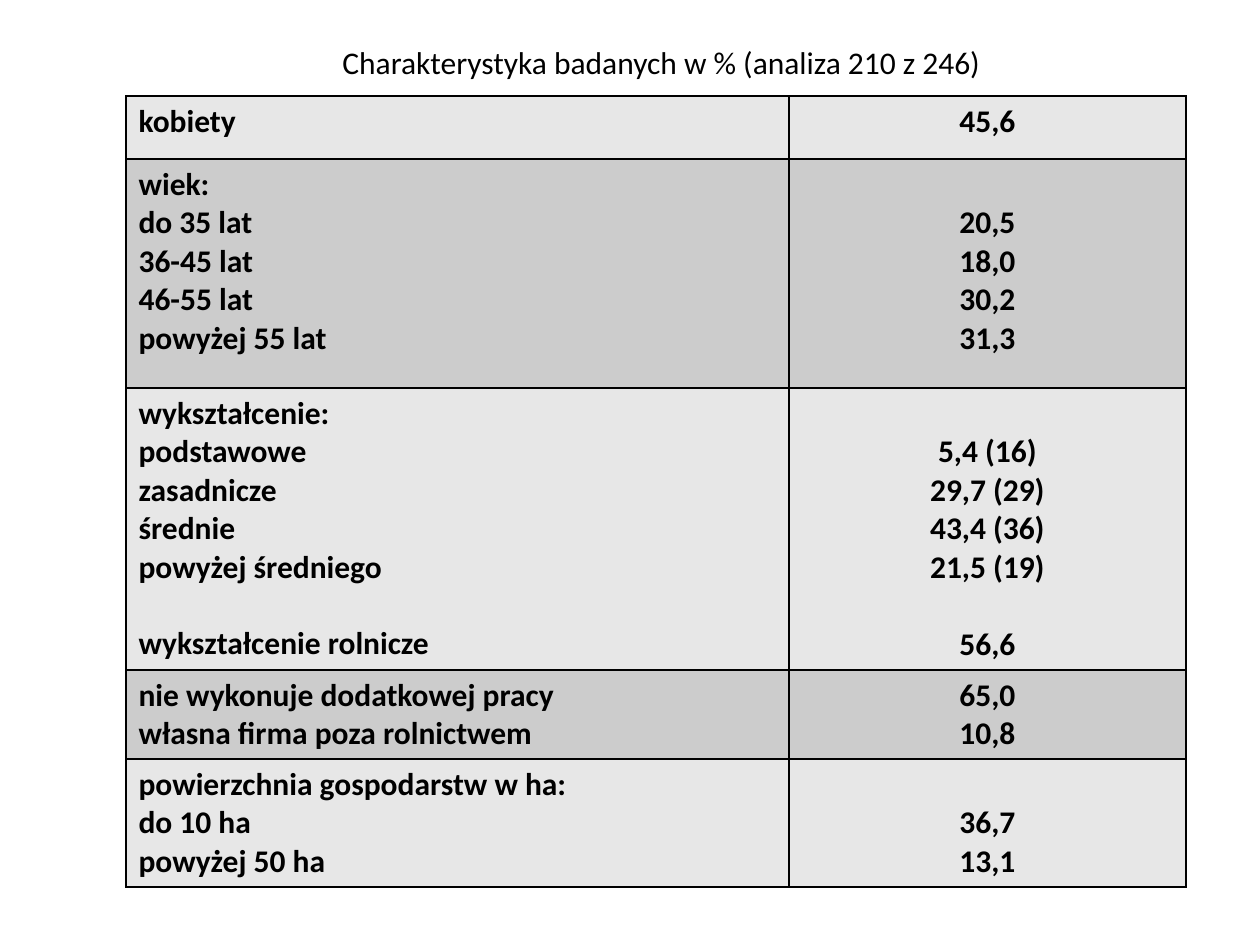
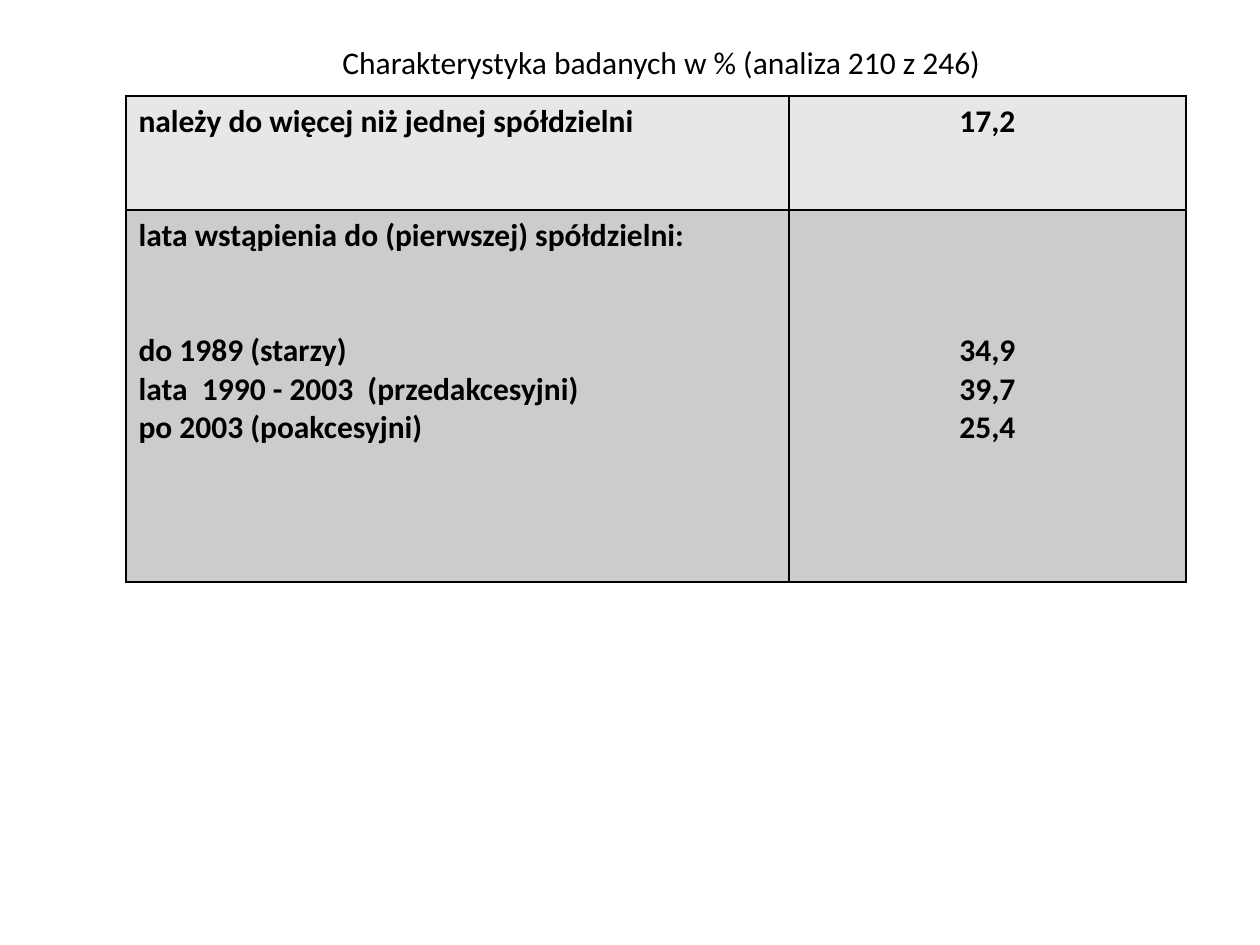
from lxml.etree import SubElement
from pptx import Presentation
from pptx.dml.color import RGBColor as Color
from pptx.enum.text import MSO_ANCHOR as Anchor, PP_ALIGN as Align
from pptx.oxml.ns import qn
from pptx.util import Pt

TITLE = "Charakterystyka badanych w % (analiza 210 z 246)"
# Each line is (label, value, empty line heights above it).
TABLES = [
    [
        (63, [("kobiety", "45,6", 0)]),
        (229, [
            ("wiek:", "", 0),
            ("do 35 lat", "20,5", 0),
            ("36-45 lat", "18,0", 0),
            ("46-55 lat", "30,2", 0),
            ("powyżej 55 lat", "31,3", 0),
        ]),
        (282, [
            ("wykształcenie:", "", 0),
            ("podstawowe", "5,4 (16)", 0),
            ("zasadnicze", "29,7 (29)", 0),
            ("średnie", "43,4 (36)", 0),
            ("powyżej średniego", "21,5 (19)", 0),
            ("wykształcenie rolnicze", "56,6", 1),
        ]),
        (89, [
            ("nie wykonuje dodatkowej pracy", "65,0", 0),
            ("własna firma poza rolnictwem", "10,8", 0),
        ]),
        (128, [
            ("powierzchnia gospodarstw w ha:", "", 0),
            ("do 10 ha", "36,7", 0),
            ("powyżej 50 ha", "13,1", 0),
        ]),
    ],
    [
        (114, [("należy do więcej niż jednej spółdzielni", "17,2", 0)]),
        (372, [
            ("lata wstąpienia do (pierwszej) spółdzielni:", "", 0),
            ("do 1989 (starzy)", "34,9", 2),
            ("lata  1990 - 2003  (przedakcesyjni)", "39,7", 0),
            ("po 2003 (poakcesyjni)", "25,4", 0),
        ]),
    ],
]

COLORS = {"text": "000000", "border": "000000", "odd": "E7E7E7", "even": "CCCCCC"}
TITLE_FONT = {"name": "Calibri", "size": Pt(18), "bold": False}
CELL_FONT = {**TITLE_FONT, "bold": True}
TABLE_FLAGS = {"first_row": False, "horz_banding": False}
COLUMN_WIDTHS = (663, 397)
ALIGNMENTS = (Align.LEFT, Align.CENTER)
TITLE_BOX = (126, 37, 1071, 49)
TABLE_CORNER = (126, 96)
LINE_HEIGHT = Pt(22)
SCALE = 914400 // 126


def px(length):
    return length * SCALE


def set_all(target, values):
    for name, value in values.items():
        setattr(target, name, value)


def write(paragraph, text, font, alignment):
    paragraph.alignment = alignment
    run = paragraph.add_run()
    run.text = text
    set_all(run.font, font)
    run.font.color.rgb = Color.from_string(COLORS["text"])


def add_title(slide):
    frame = slide.shapes.add_textbox(*map(px, TITLE_BOX)).text_frame
    set_all(frame, {"word_wrap": True, "vertical_anchor": Anchor.MIDDLE})
    write(frame.paragraphs[0], TITLE, TITLE_FONT, Align.CENTER)


def add_borders(cell):
    properties = cell._tc.get_or_add_tcPr()
    for side in ("lnL", "lnR", "lnT", "lnB"):
        line = SubElement(properties, qn(f"a:{side}"), w=str(Pt(1)))
        fill = SubElement(line, qn("a:solidFill"))
        SubElement(fill, qn("a:srgbClr"), val=COLORS["border"])


def fill_cell(cell, lines, alignment, color):
    add_borders(cell)
    cell.fill.solid()
    cell.fill.fore_color.rgb = Color.from_string(color)
    frame = cell.text_frame
    empty_lines = 0
    first = True
    for text, gap in lines:
        empty_lines += gap
        if not text:
            empty_lines += 1
            continue
        space = empty_lines * LINE_HEIGHT
        if first:
            paragraph = frame.paragraphs[0]
            cell.margin_top = cell.margin_top + space
        else:
            paragraph = frame.add_paragraph()
            paragraph.space_before = Pt(space / Pt(1))
        write(paragraph, text, CELL_FONT, alignment)
        first, empty_lines = False, 0


def add_table(slide, rows):
    size = (sum(COLUMN_WIDTHS), sum(height for height, _ in rows))
    table = slide.shapes.add_table(
        len(rows), len(COLUMN_WIDTHS), *map(px, TABLE_CORNER + size)
    ).table
    set_all(table, TABLE_FLAGS)
    for column, width in zip(table.columns, COLUMN_WIDTHS):
        column.width = px(width)
    for index, (height, lines) in enumerate(rows):
        table.rows[index].height = px(height)
        color = COLORS["even" if index % 2 else "odd"]
        for column, alignment in enumerate(ALIGNMENTS):
            column_lines = [(line[column], line[2]) for line in lines]
            fill_cell(table.cell(index, column), column_lines, alignment, color)


def main():
    presentation = Presentation()
    set_all(presentation, {"slide_width": px(1260), "slide_height": px(945)})
    for rows in TABLES:
        slide = presentation.slides.add_slide(presentation.slide_layouts[6])
        add_title(slide)
        add_table(slide, rows)
    presentation.save("out.pptx")


if __name__ == "__main__":
    main()
